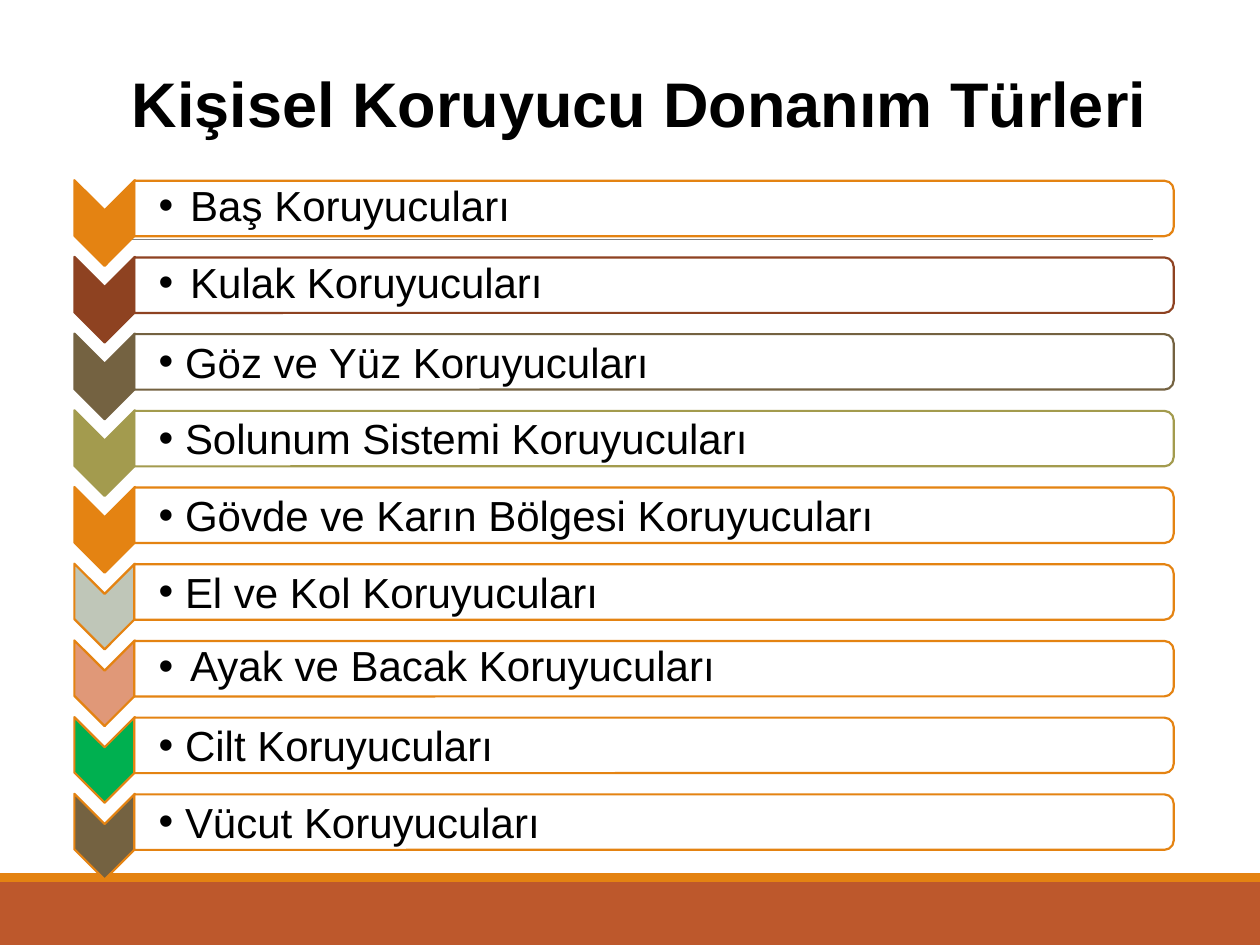
from lxml import etree
from pptx import Presentation
from pptx.dml.color import RGBColor
from pptx.enum import shapes, text
from pptx.oxml import ns
from pptx.util import Inches, Pt

COLORS = {
    "orange": "E48312", "rust": "BD582C", "brown": "8E4221",
    "umber": "746241", "olive": "A39B4E", "sage": "BFC6B8",
    "salmon": "E09878", "green": "00B050", "gray": "808080",
    "white": "FFFFFF", "black": "000000",
}
TITLE = "Kişisel Koruyucu Donanım Türleri"
ITEMS = [
    ("Baş Koruyucuları", "orange", "orange", True),
    ("Kulak Koruyucuları", "brown", "brown", True),
    (" Göz ve Yüz Koruyucuları", "umber", "umber", False),
    (" Solunum Sistemi Koruyucuları", "olive", "olive", False),
    (" Gövde ve Karın Bölgesi Koruyucuları", "orange", "orange", False),
    (" El ve Kol Koruyucuları", "sage", "orange", False),
    ("Ayak ve Bacak Koruyucuları", "salmon", "orange", True),
    (" Cilt Koruyucuları", "green", "orange", False),
    (" Vücut Koruyucuları", "umber", "orange", False),
]
FIRST_TOP, LAST_TOP = 1.53, 6.4
PITCH = (LAST_TOP - FIRST_TOP) / (len(ITEMS) - 1)


def rgb(name):
    return RGBColor.from_string(COLORS[name])


def add_part(page, kind, place, fill, line=None, rotation=0, alpha=None):
    part = page.shapes.add_shape(kind, *map(Inches, place))
    part.shadow.inherit = False
    part.rotation = rotation
    part.fill.solid()
    part.fill.fore_color.rgb = rgb(fill)
    if alpha is not None:
        color = part._element.spPr.find(".//" + ns.qn("a:srgbClr"))
        etree.SubElement(color, ns.qn("a:alpha"), val=str(alpha * 1000))
    if line:
        part.line.color.rgb = rgb(line)
        part.line.width = Pt(1.25)
    else:
        part.line.fill.background()


def write(box, words, size, bold=False, align=text.PP_ALIGN.LEFT,
          insets=(0.1, 0.05, 0.1, 0.05), spacing=1.0, bullet=False, hanging=0):
    frame = box.text_frame
    frame.word_wrap = True
    frame.auto_size = text.MSO_AUTO_SIZE.NONE
    frame.vertical_anchor = text.MSO_ANCHOR.MIDDLE
    (frame.margin_left, frame.margin_top,
     frame.margin_right, frame.margin_bottom) = map(Inches, insets)
    para = frame.paragraphs[0]
    para.alignment = align
    para.line_spacing = spacing
    if bullet:
        para.level = 1
        properties = para._p.get_or_add_pPr()
        properties.set("marL", str(Inches(hanging)))
        properties.set("indent", str(-Inches(hanging)))
        etree.SubElement(properties, ns.qn("a:buFont"), typeface="Arial")
        etree.SubElement(properties, ns.qn("a:buChar"), char="•")
    span = para.add_run()
    span.text = words
    span.font.name = "Arial"
    span.font.size = Pt(size)
    span.font.bold = bold
    span.font.color.rgb = rgb("black")


def add_backdrop(page):
    add_part(page, shapes.MSO_SHAPE.RECTANGLE, (0, 7, 10, 0.5), "rust")
    add_part(page, shapes.MSO_SHAPE.RECTANGLE, (0, 6.93, 10, 0.07), "orange")
    rule = page.shapes.add_connector(
        shapes.MSO_CONNECTOR.STRAIGHT,
        *map(Inches, (0.98, 1.9, 9.15, 1.9)))
    rule.line.color.rgb = rgb("gray")
    rule.line.width = Pt(0.5)
    etree.SubElement(rule._element.spPr, ns.qn("a:effectLst"))


def add_item(page, index, words, fill, line, hangs):
    top = FIRST_TOP + index * PITCH
    add_part(page, shapes.MSO_SHAPE.CHEVRON, (0.49, top, 0.68, 0.48),
             fill, line, rotation=90)
    add_part(page, shapes.MSO_SHAPE.ROUND_2_SAME_RECTANGLE,
             (4.97, top - 4, 0.44, 8.25), "white", line, rotation=90, alpha=90)
    box = page.shapes.add_textbox(
        *map(Inches, (1.07, top - 0.08, 8.23, 0.4)))
    write(box, words, 24, insets=(0.19, 0.02, 0.02, 0.02), bullet=True,
          spacing=0.9 if hangs else 1.0, hanging=0.25 if hangs else 0)


def main():
    deck = Presentation()
    deck.slide_width, deck.slide_height = Inches(10), Inches(7.5)
    page = deck.slides.add_slide(deck.slide_layouts[5])
    title = page.shapes.title
    title.left, title.top, title.width, title.height = map(
        Inches, (0.69, 0.4, 8.77, 0.83))
    write(title, TITLE, 36, bold=True, align=text.PP_ALIGN.CENTER)
    add_backdrop(page)
    for index, item in enumerate(ITEMS):
        add_item(page, index, *item)
    deck.save("out.pptx")


if __name__ == "__main__":
    main()
